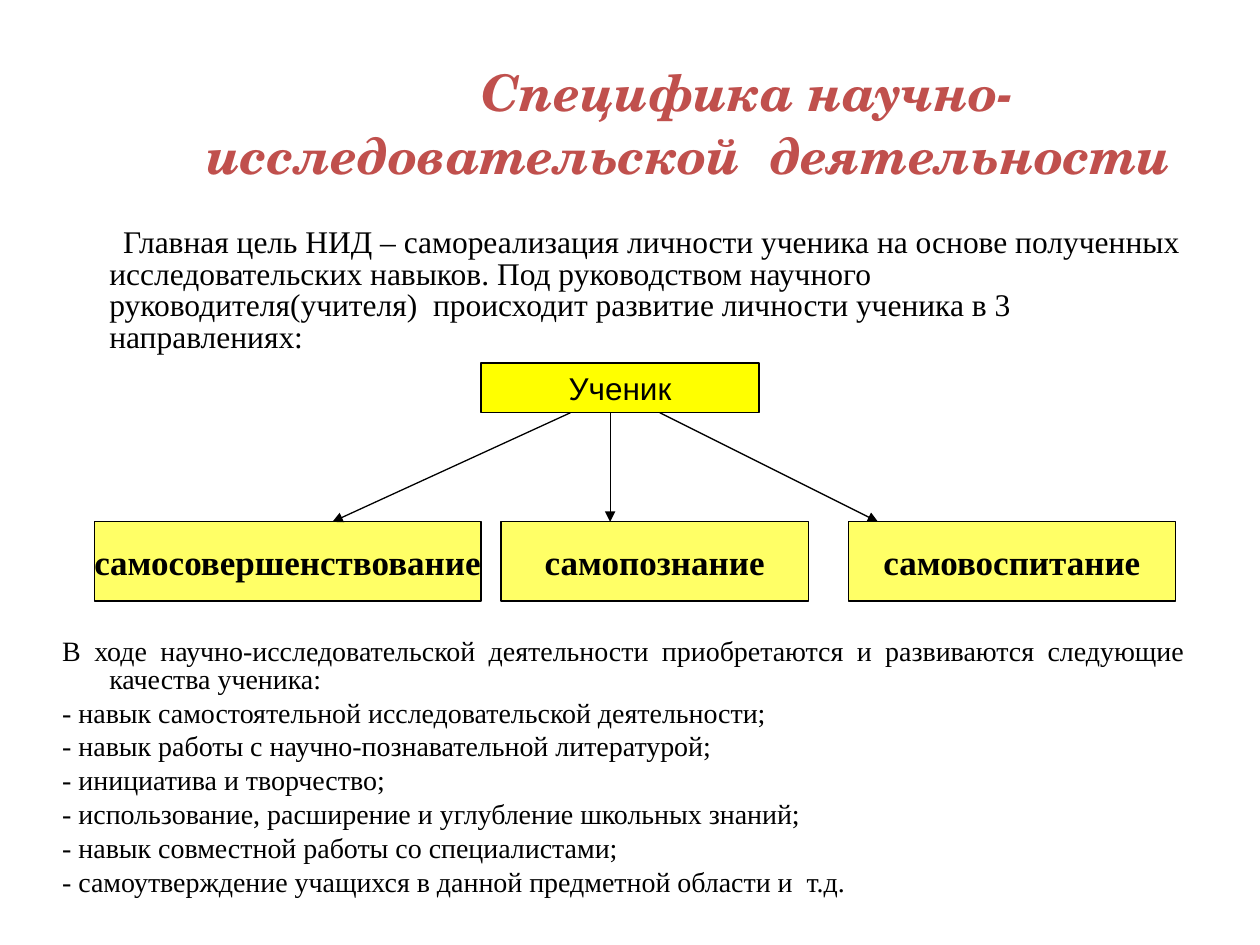
import pptx
import pptx.dml.color
import pptx.enum.shapes
import pptx.enum.text
import pptx.util
from lxml import etree
from pptx.oxml.ns import qn

Cm, Pt = pptx.util.Cm, pptx.util.Pt
RGBColor = pptx.dml.color.RGBColor
ALIGN = pptx.enum.text.PP_ALIGN
MIDDLE = pptx.enum.text.MSO_ANCHOR.MIDDLE

BLACK = RGBColor(0x00, 0x00, 0x00)
RED = RGBColor(0xC0, 0x50, 0x4D)
YELLOW = RGBColor(0xFF, 0xFF, 0x00)
PALE_YELLOW = RGBColor(0xFF, 0xFF, 0x66)
SERIF = "Times New Roman"


def apply_format(target, values):
    for name, value in values.items():
        setattr(target, name, value)


def write_para(para, text, layout, font, color, margin=0, indent=0):
    properties = para._p.get_or_add_pPr()
    properties.set("marL", str(Cm(margin)))
    properties.set("indent", str(Cm(indent)))
    etree.SubElement(properties, qn("a:buNone"))
    apply_format(para, layout)
    span = para.add_run()
    span.text = text
    apply_format(span.font, font)
    span.font.color.rgb = color


deck = pptx.Presentation()
deck.slide_width, deck.slide_height = Cm(25.4), Cm(19.05)
page = deck.slides.add_slide(deck.slide_layouts[1])
title, body = page.placeholders

# Title: two centred lines, each with its own left margin
apply_format(title, {"left": Cm(1.9), "top": Cm(0.86), "width": Cm(23.5), "height": Cm(3.18)})
frame = title.text_frame
apply_format(frame, {"vertical_anchor": MIDDLE, "word_wrap": True,
                     "auto_size": pptx.enum.text.MSO_AUTO_SIZE.NONE})
title_font = {"name": "TeX Gyre Schola", "size": Pt(28.8), "bold": True, "italic": True}
title_layout = {"alignment": ALIGN.CENTER, "line_spacing": Pt(36), "space_before": Pt(0)}
title_lines = [("Специфика научно-", 2.86), ("исследовательской  деятельности", 0.48)]
for number, (text, margin) in enumerate(title_lines):
    para = frame.add_paragraph() if number else frame.paragraphs[0]
    write_para(para, text, title_layout, title_font, RED, margin)

# Body: goal above the diagram, qualities below it
apply_format(body, {"left": Cm(1), "top": Cm(4.47), "width": Cm(23.14), "height": Cm(14.58)})
frame = body.text_frame
apply_format(frame, {"word_wrap": True, "auto_size": pptx.enum.text.MSO_AUTO_SIZE.NONE})
goal = ("Главная цель НИД – самореализация личности ученика на основе полученных "
        "исследовательских навыков. Под руководством научного руководителя(учителя)  "
        "происходит развитие личности ученика в 3 направлениях:")
write_para(frame.paragraphs[0], goal,
           {"alignment": ALIGN.LEFT, "line_spacing": 0.84, "space_before": Pt(0)},
           {"name": SERIF, "size": Pt(18)}, BLACK, 0.95, 0.28)

qualities = [
    "В ходе научно-исследовательской деятельности приобретаются и развиваются "
    "следующие качества ученика:",
    "- навык самостоятельной исследовательской деятельности;",
    "- навык работы с научно-познавательной литературой;",
    "- инициатива и творчество;",
    "- использование, расширение и углубление школьных знаний;",
    "- навык совместной работы со специалистами;",
    "- самоутверждение учащихся в данной предметной области и  т.д.",
]
for number, text in enumerate(qualities):
    gap = Pt(3.2) if number else Pt(162)
    write_para(frame.add_paragraph(), text,
               {"alignment": ALIGN.JUSTIFY, "line_spacing": 0.84, "space_before": gap},
               {"name": SERIF, "size": Pt(16)}, BLACK, 0.95, -0.95)

# Diagram boxes: text, left, top, width, height, fill, font
pupil_font = {"name": "Arial", "size": Pt(18)}
branch_font = {"name": SERIF, "size": Pt(20), "bold": True}
PUPIL_TOP, PUPIL_HEIGHT = 7.32, 1
BRANCH_TOP, BRANCH_HEIGHT = 10.52, 1.6
boxes = [("Ученик", 9.7, PUPIL_TOP, 5.6, PUPIL_HEIGHT, YELLOW, pupil_font)]
for text, left, width in [("самосовершенствование", 1.9, 7.8),
                          ("самопознание", 10.1, 6.2),
                          ("самовоспитание", 17.1, 6.6)]:
    boxes.append((text, left, BRANCH_TOP, width, BRANCH_HEIGHT, PALE_YELLOW, branch_font))

for text, left, top, width, height, color, font in boxes:
    box = page.shapes.add_shape(pptx.enum.shapes.MSO_SHAPE.RECTANGLE,
                                Cm(left), Cm(top), Cm(width), Cm(height))
    box.shadow.inherit = False
    box.fill.solid()
    box.fill.fore_color.rgb = color
    box.line.color.rgb = BLACK
    box.line.width = Pt(0.75)
    apply_format(box.text_frame, {"word_wrap": False, "vertical_anchor": MIDDLE})
    write_para(box.text_frame.paragraphs[0], text, {"alignment": ALIGN.CENTER}, font, BLACK)

# Arrows from the pupil to the three directions
for start, end in [(11.5, 6.7), (13.3, 17.7), (12.3, 12.3)]:
    arrow = page.shapes.add_connector(pptx.enum.shapes.MSO_CONNECTOR.STRAIGHT,
                                      Cm(start), Cm(PUPIL_TOP + PUPIL_HEIGHT),
                                      Cm(end), Cm(BRANCH_TOP))
    arrow.line.color.rgb = BLACK
    arrow.line.width = Pt(0.75)
    etree.SubElement(arrow.line._get_or_add_ln(), qn("a:tailEnd"), type="triangle")
    etree.SubElement(arrow._element.spPr, qn("a:effectLst"))

deck.save("out.pptx")
